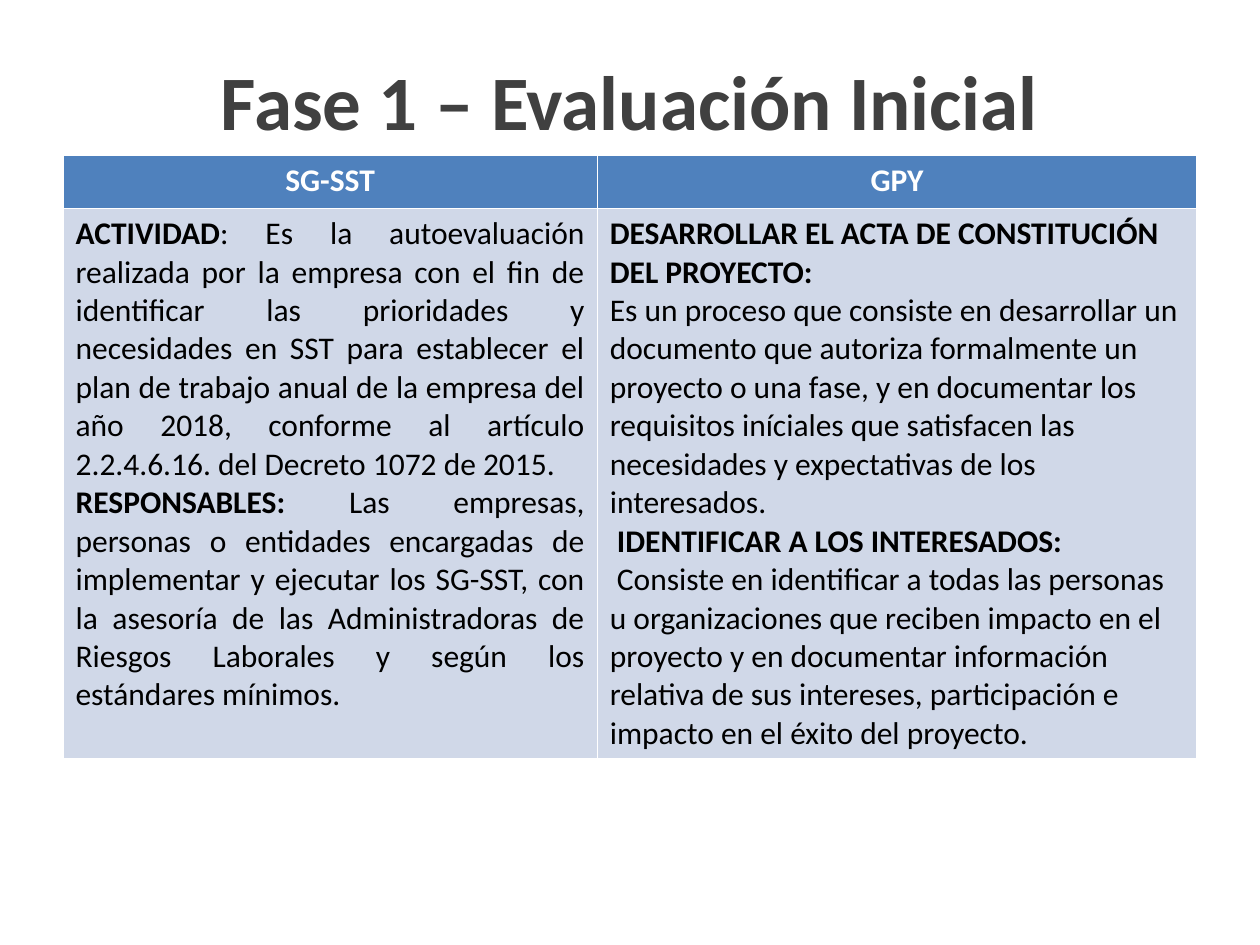
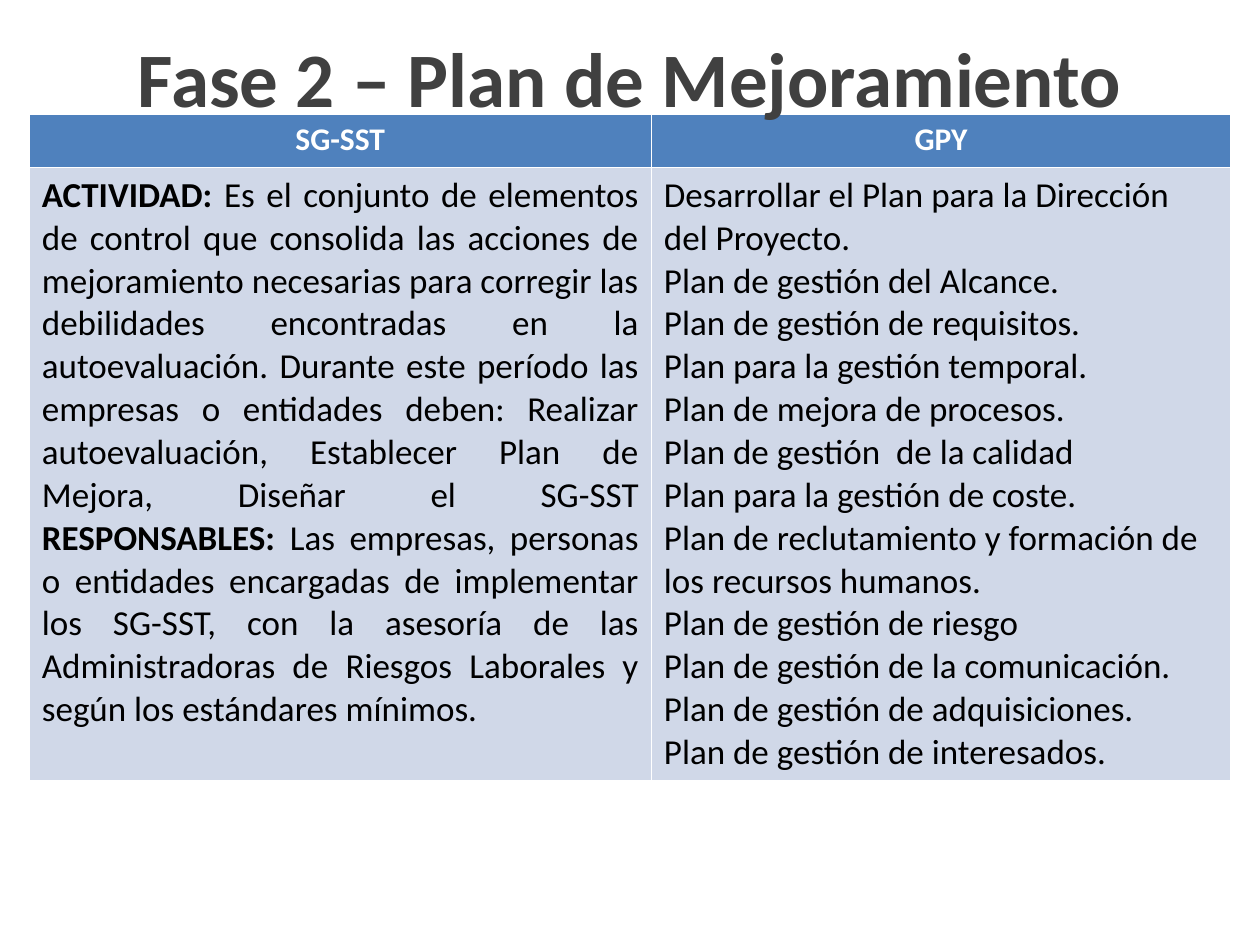
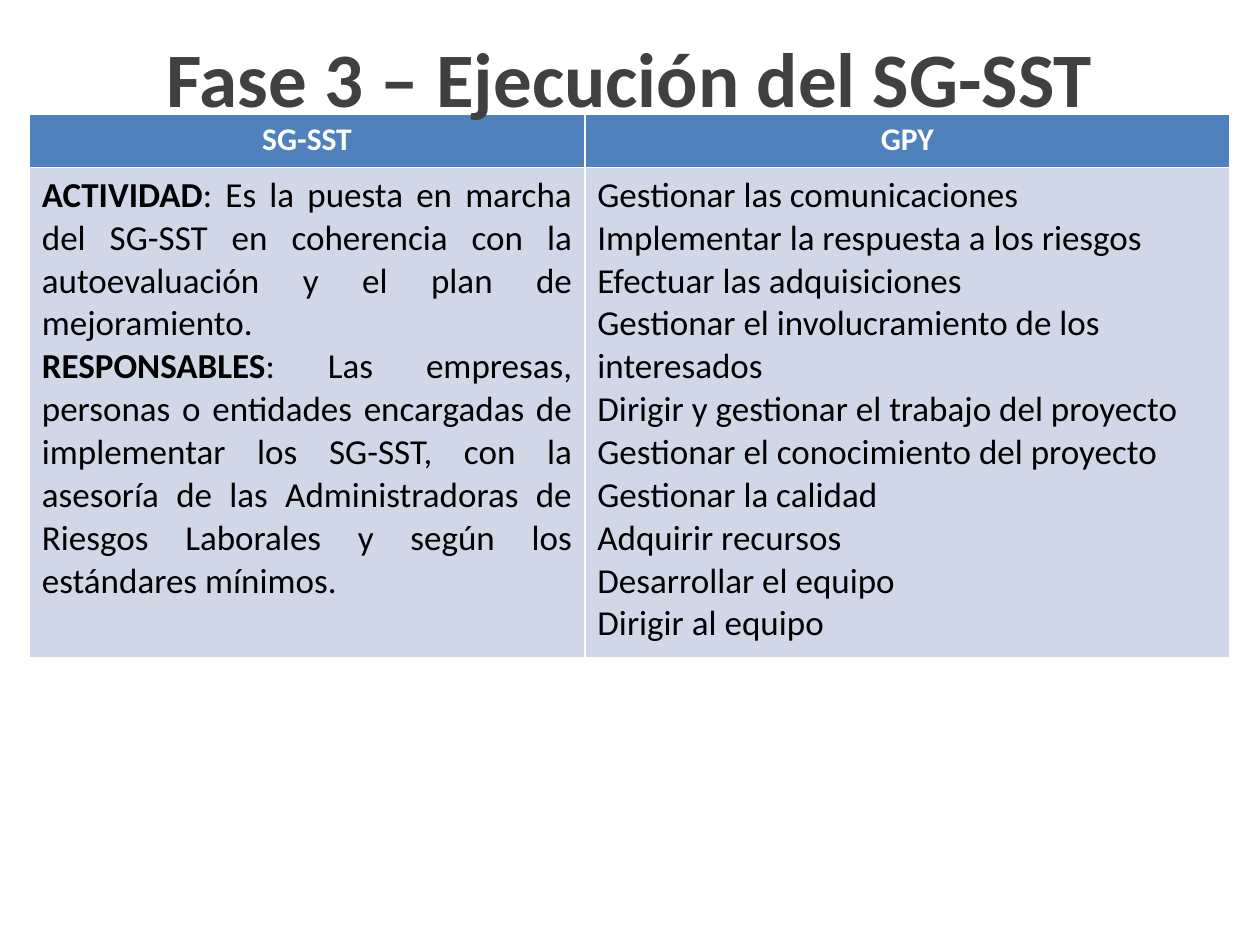
from dataclasses import dataclass
from typing import NamedTuple

import pptx
import pptx.dml.color
import pptx.enum.text
import pptx.util

Cm = pptx.util.Cm
Pt = pptx.util.Pt
RGBColor = pptx.dml.color.RGBColor
Align = pptx.enum.text.PP_ALIGN

# Shared look
FONT = "Calibri"
WHITE = RGBColor(0xFF, 0xFF, 0xFF)
BLACK = RGBColor(0x00, 0x00, 0x00)
GREY = RGBColor(0x40, 0x40, 0x40)
BLUE = RGBColor(0x4F, 0x81, 0xBD)
PALE = RGBColor(0xD0, 0xD8, 0xE8)
HEADS = ("SG-SST", "GPY")
ROWS = (Cm(1.07), Cm(9.88))


class Run(NamedTuple):
    text: str
    bold: bool = False
    wrap: bool = False  # starts on a new line of the same paragraph


Para = list[Run]


@dataclass
class Phase:
    title: str
    rise: float  # top of the title, cm
    left: float
    top: float
    cols: tuple[float, float]
    size: int
    tasks: list[Para]
    steps: list[Para]


def plain(*lines: str) -> list[Para]:
    return [[Run(line)] for line in lines]


# Wording
PHASES = [
    Phase(
        "Fase 1 – Evaluación Inicial", 0.41, 1.27, 3.13, (10.77, 12.09), 18,
        [
            [Run("ACTIVIDAD", True),
             Run(": Es la autoevaluación realizada por la empresa con el fin de "
                 "identificar las prioridades y necesidades en SST para establecer "
                 "el plan de trabajo anual de la empresa del año 2018, conforme al "
                 "artículo 2.2.4.6.16. del Decreto 1072 de 2015. ")],
            [Run("RESPONSABLES: ", True),
             Run("Las empresas, personas o entidades encargadas de implementar y "
                 "ejecutar los SG-SST, con la asesoría de las Administradoras de "
                 "Riesgos Laborales y según los estándares mínimos.")],
        ],
        [
            [Run("DESARROLLAR EL ACTA DE CONSTITUCIÓN DEL PROYECTO:", True)],
            [Run("Es un proceso que consiste en desarrollar un documento que "
                 "autoriza formalmente un proyecto o una fase, y en documentar los "
                 "requisitos iníciales que satisfacen las necesidades y "
                 "expectativas de los interesados.")],
            [Run(" IDENTIFICAR A LOS INTERESADOS:", True)],
            [Run(" Consiste en identificar a todas las personas u organizaciones "
                 "que reciben impacto en el proyecto y en documentar información "
                 "relativa de sus intereses, participación e impacto en el éxito "
                 "del proyecto.")],
        ],
    ),
    Phase(
        "Fase 2 – Plan de Mejoramiento", -0.05, 0.59, 2.31, (12.54, 11.68), 20,
        [
            [Run("ACTIVIDAD: ", True),
             Run("Es el conjunto de elementos de control que consolida las acciones "
                 "de mejoramiento necesarias para corregir las debilidades "
                 "encontradas en la autoevaluación. Durante este período las "
                 "empresas o entidades deben: Realizar autoevaluación, Establecer "
                 "Plan de Mejora, Diseñar el SG-SST"),
             Run("RESPONSABLES: ", True, wrap=True),
             Run("Las empresas, personas o entidades encargadas de implementar los "
                 "SG-SST, con la asesoría de las Administradoras de Riesgos "
                 "Laborales y según los estándares mínimos.")],
        ],
        plain(
            "Desarrollar el Plan para la Dirección del Proyecto.",
            "Plan de gestión del Alcance.",
            "Plan de gestión de requisitos.",
            "Plan para la gestión temporal.",
            "Plan de mejora de procesos.",
            "Plan de gestión  de la calidad",
            "Plan para la gestión de coste.",
            "Plan de reclutamiento y formación de los recursos humanos.",
            "Plan de gestión de riesgo",
            "Plan de gestión de la comunicación.",
            "Plan de gestión de adquisiciones.",
            "Plan de gestión de interesados.",
        ),
    ),
    Phase(
        "Fase 3 – Ejecución del SG-SST", -0.05, 0.59, 2.31, (11.2, 13.0), 20,
        [
            [Run("ACTIVIDAD", True),
             Run(": Es la puesta en marcha del SG-SST en coherencia con la "
                 "autoevaluación y el plan de mejoramiento. ")],
            [Run("RESPONSABLES", True),
             Run(": Las empresas, personas o entidades encargadas de implementar "
                 "los SG-SST, con la asesoría de las Administradoras de Riesgos "
                 "Laborales y según los estándares mínimos. ")],
        ],
        plain(
            "Gestionar las comunicaciones",
            "Implementar la respuesta a los riesgos",
            "Efectuar las adquisiciones",
            "Gestionar el involucramiento de los interesados",
            "Dirigir y gestionar el trabajo del proyecto",
            "Gestionar el conocimiento del proyecto",
            "Gestionar la calidad",
            "Adquirir recursos",
            "Desarrollar el equipo",
            "Dirigir al equipo",
        ),
    ),
]


def write(frame, paras: list[Para], size: int, ink: RGBColor, align: Align) -> None:
    for i, para in enumerate(paras):
        line = frame.add_paragraph() if i else frame.paragraphs[0]
        line.alignment = align
        for part in para:
            if part.wrap:
                line.add_line_break()
            run = line.add_run()
            run.text = part.text
            run.font.name = FONT
            run.font.size = Pt(size)
            run.font.bold = part.bold
            run.font.color.rgb = ink


def fill(cell, back: RGBColor, paras: list[Para], size: int, ink: RGBColor,
         align: Align) -> None:
    cell.fill.solid()
    cell.fill.fore_color.rgb = back
    write(cell.text_frame, paras, size, ink, align)


def draw(deck, phase: Phase) -> None:
    slide = deck.slides.add_slide(deck.slide_layouts[5])

    # Title
    title = slide.shapes.title
    title.left, title.top = Cm(1.27), Cm(phase.rise)
    title.width, title.height = Cm(22.86), Cm(3.18)
    frame = title.text_frame
    frame.word_wrap = True
    frame.auto_size = pptx.enum.text.MSO_AUTO_SIZE.NONE
    frame.vertical_anchor = pptx.enum.text.MSO_ANCHOR.MIDDLE
    write(frame, [[Run(phase.title, True)]], 44, GREY, Align.CENTER)

    # Table, placed behind the title
    shape = slide.shapes.add_table(2, 2, Cm(phase.left), Cm(phase.top),
                                   Cm(sum(phase.cols)), sum(ROWS))
    title.element.addprevious(shape.element)
    table = shape.table
    for row, height in zip(table.rows, ROWS):
        row.height = height
    bodies = ((phase.tasks, Align.JUSTIFY), (phase.steps, Align.LEFT))
    for i, (head, (paras, align)) in enumerate(zip(HEADS, bodies)):
        table.columns[i].width = Cm(phase.cols[i])
        fill(table.cell(0, i), BLUE, [[Run(head, True)]], 18, WHITE, Align.CENTER)
        fill(table.cell(1, i), PALE, paras, phase.size, BLACK, align)


def main() -> None:
    deck = pptx.Presentation()
    deck.slide_width, deck.slide_height = Cm(25.4), Cm(19.05)
    for phase in PHASES:
        draw(deck, phase)
    deck.save("out.pptx")


if __name__ == "__main__":
    main()
